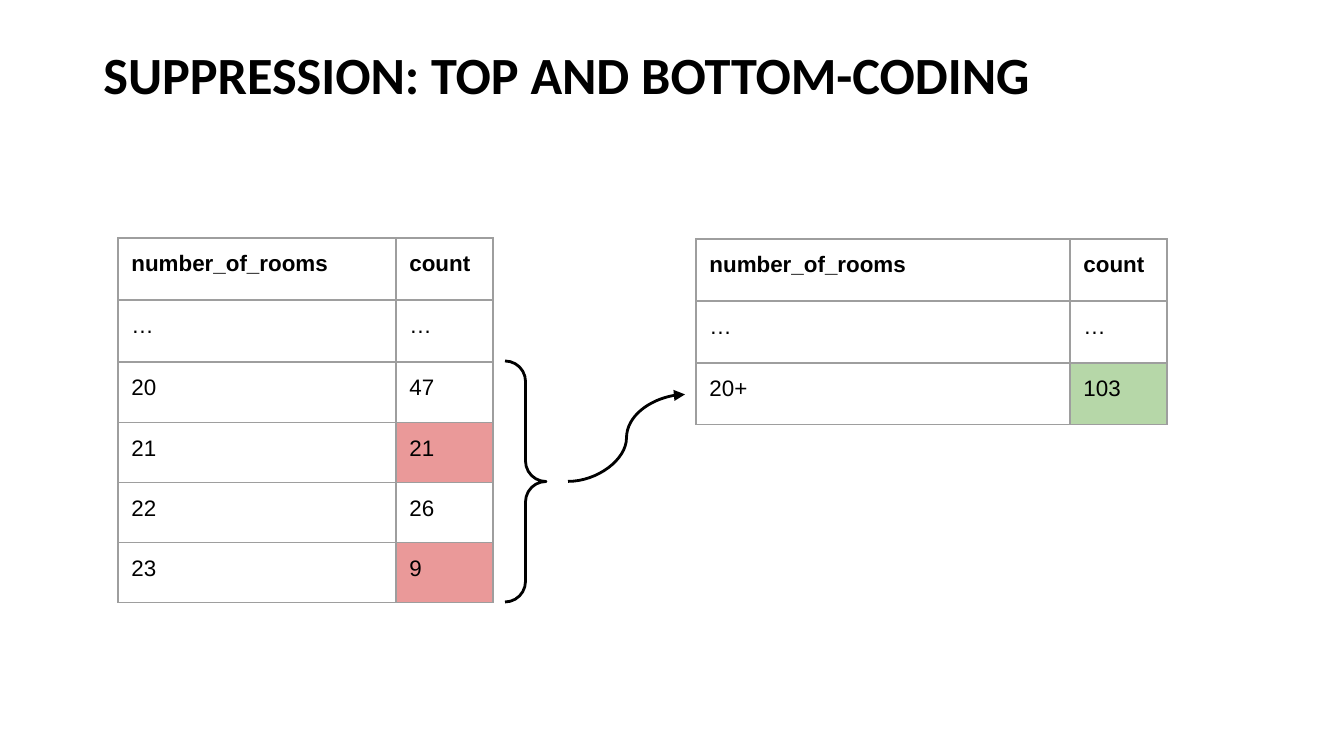
from pptx import Presentation
from pptx import util as u
from pptx.dml.color import RGBColor
from pptx.enum import shapes, text
from pptx.oxml import ns, xmlchemy

BLACK = RGBColor(0x00, 0x00, 0x00)
GRAY = RGBColor(0x9E, 0x9E, 0x9E)
RED = RGBColor(0xEA, 0x99, 0x99)
GREEN = RGBColor(0xB6, 0xD7, 0xA8)
HEADER = ("number_of_rooms", "count")
DOTS = ("…", "…")


def px(n):
    """Turn px at 134.4 to the inch into EMU."""
    return u.Emu(round(n * 914400 / 134.4))


def set_all(obj, values):
    """Set attributes of an object from a dict."""
    for name, value in values.items():
        setattr(obj, name, value)


def sub(parent, tag, **attrs):
    """Append a DrawingML element and return it."""
    el = xmlchemy.OxmlElement(tag)
    for name, value in attrs.items():
        el.set(name, value)
    parent.append(el)
    return el


def write(tf, content, size, font, bold):
    """Write one black, left-aligned paragraph into a text frame."""
    p = tf.paragraphs[0]
    p.alignment = text.PP_ALIGN.LEFT
    r = p.add_run()
    r.text = content
    set_all(r.font, {"size": u.Pt(size), "name": font, "bold": bold})
    r.font.color.rgb = BLACK


def add_title(s, content, x, y, w, h):
    """Place and format the title placeholder in a box."""
    sp = s.shapes.title
    set_all(sp, {"left": px(x), "top": px(y), "width": px(w), "height": px(h)})
    tf = sp.text_frame
    set_all(tf, {"word_wrap": True, "auto_size": text.MSO_AUTO_SIZE.NONE,
                 "vertical_anchor": text.MSO_ANCHOR.TOP})
    write(tf, content, 28, "Calibri", True)


def format_cell(cell, content, bold, color):
    """Give a cell its text, margins, borders and fill."""
    margin = u.Inches(0.1)
    set_all(cell, {"margin_left": margin, "margin_right": margin,
                   "margin_top": margin, "margin_bottom": margin})
    write(cell.text_frame, content, 12, "Arial", bold)
    tc_pr = cell._tc.get_or_add_tcPr()
    for side in "LRTB":
        ln = sub(tc_pr, f"a:ln{side}", w=str(u.Pt(0.75)))
        sub(sub(ln, "a:solidFill"), "a:srgbClr", val=str(GRAY))
    if color is None:
        cell.fill.background()
    else:
        cell.fill.solid()
        cell.fill.fore_color.rgb = color


def add_counts(s, x, y, widths, heights, rows, marks):
    """Place a table of counts, filling the marked counts."""
    frame = s.shapes.add_table(len(rows), len(widths), px(x), px(y),
                               px(sum(widths)), px(sum(heights)))
    table = frame.table
    set_all(table, {"first_row": False, "horz_banding": False})
    for column, width in zip(table.columns, widths):
        column.width = px(width)
    for i, (row, height) in enumerate(zip(rows, heights)):
        table.rows[i].height = px(height)
        for j, content in enumerate(row):
            format_cell(table.cell(i, j), content, i == 0, marks.get(i) if j else None)


def style_line(line):
    """Make a line black and 1.5 pt wide."""
    line.color.rgb = BLACK
    line.width = u.Pt(1.5)


def add_merge(s, x, y, w, h):
    """Draw a brace on the left of a box and a curved arrow out to its right."""
    brace_w, gap, rise = 41, 22, 87
    brace = s.shapes.add_shape(shapes.MSO_SHAPE.RIGHT_BRACE, px(x), px(y), px(brace_w), px(h))
    brace.adjustments[0] = brace.adjustments[1] = 0.5
    brace.shadow.inherit = False
    brace.fill.background()
    style_line(brace.line)
    mid = y + h / 2
    arrow = s.shapes.add_connector(shapes.MSO_CONNECTOR.CURVE, px(x + brace_w + gap), px(mid),
                                   px(x + w), px(mid - rise))
    style_line(arrow.line)
    sub(arrow.line._get_or_add_ln(), "a:tailEnd", type="triangle")
    sub(arrow._element.find(ns.qn("p:spPr")), "a:effectLst")


def main():
    """Build the slide and save it."""
    prs = Presentation()
    set_all(prs, {"slide_width": px(1344), "slide_height": px(756)})
    s = prs.slides.add_slide(prs.slide_layouts[5])
    add_title(s, "SUPPRESSION: TOP AND BOTTOM-CODING", 90, 36, 1126, 190)
    add_counts(s, 118, 238, (278, 97), (62, 62, 61, 60, 60, 60),
               (HEADER, DOTS, ("20", "47"), ("21", "21"), ("22", "26"), ("23", "9")),
               {3: RED, 5: RED})
    add_counts(s, 696, 239, (374, 97), (62, 62, 62),
               (HEADER, DOTS, ("20+", "103")), {2: GREEN})
    add_merge(s, 505, 361, 180, 241)
    prs.save("out.pptx")


if __name__ == "__main__":
    main()
